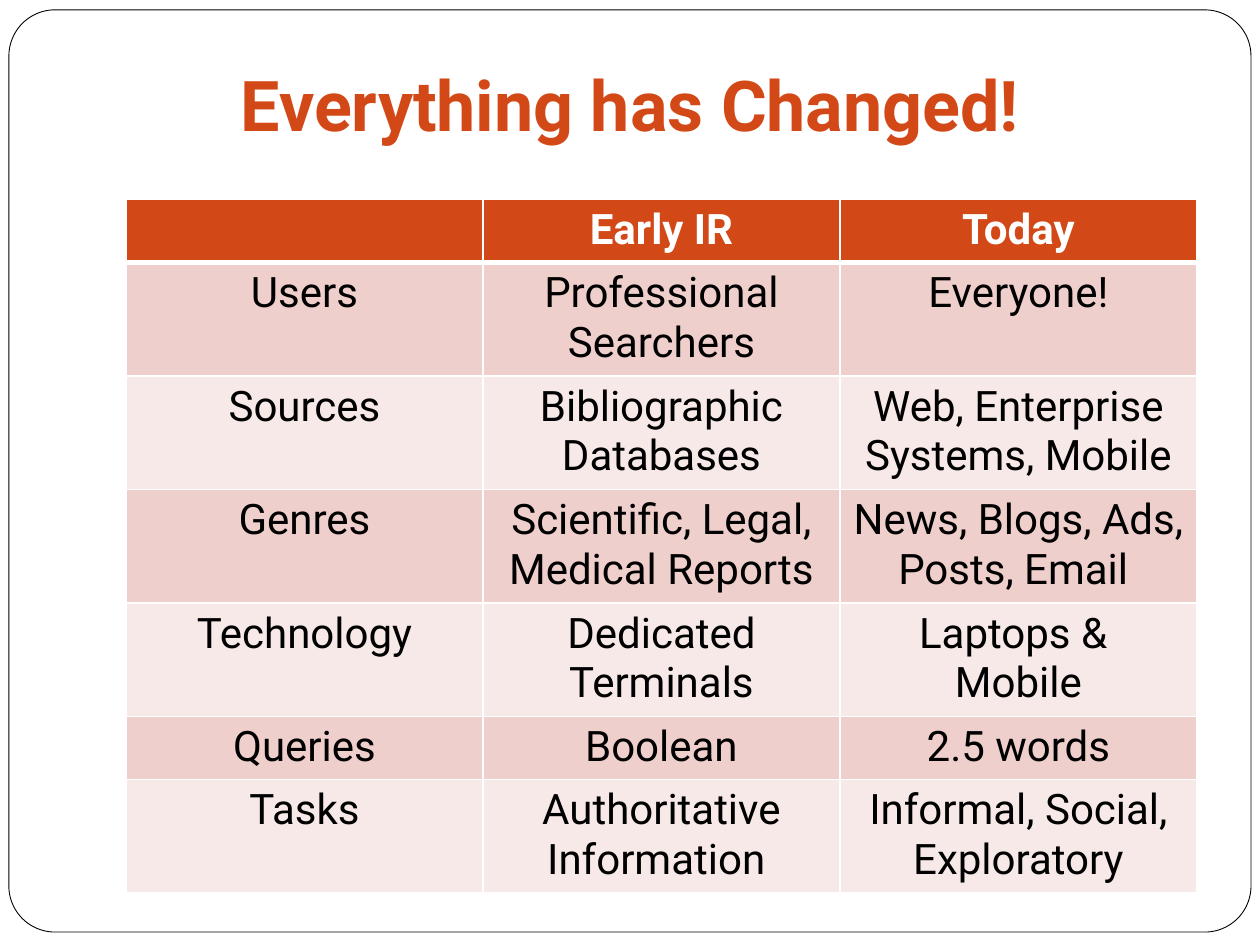
from lxml import etree
from pptx import Presentation
from pptx import util as u
from pptx.dml.color import RGBColor
from pptx.enum import shapes, text
from pptx.oxml.ns import qn

# Content: each cell is a tuple of paragraphs
TITLE = "Everything has Changed!"
HEADER = [(), ("Early IR",), ("Today",)]
ROWS = [
    [("Users",), ("Professional Searchers",), ("Everyone!",)],
    [("Sources",), ("Bibliographic", "Databases"), ("Web, Enterprise Systems, Mobile",)],
    [("Genres",), ("Scientific, Legal, Medical Reports",), ("News, Blogs, Ads, Posts, Email ",)],
    [("Technology",), ("Dedicated Terminals",), ("Laptops & ", "Mobile")],
    [("Queries",), ("Boolean",), ("2.5 words",)],
    [("Tasks",), ("Authoritative Information ",), ("Informal, Social, Exploratory",)],
]
ONE_LINE_ROWS = {"Queries"}

THEME = {
    "font": "Roboto",
    "title_size": 40,
    "cell_size": 24,
    "accent": "D34817",
    "paper": "FFFFFF",
    "ink": "000000",
    "bands": ("EFCFCC", "F7E9E8"),
}
ONE_LINE, TWO_LINES = u.Cm(1.25), u.Cm(2.25)


def color(name):
    return RGBColor.from_string(THEME.get(name, name))


def write(frame, lines, size, ink, bold):
    for index, line in enumerate(lines):
        paragraph = frame.paragraphs[0] if index == 0 else frame.add_paragraph()
        paragraph.alignment = text.PP_ALIGN.CENTER
        run = paragraph.add_run()
        run.text = line
        run.font.name = THEME["font"]
        run.font.size = u.Pt(size)
        run.font.bold = bold
        run.font.color.rgb = color(ink)


def add_borders(cell, widths):
    """Put white borders ahead of the cell's fill, as the schema requires."""
    properties = cell._tc.get_or_add_tcPr()
    for position, (side, width) in enumerate(widths.items()):
        line = etree.Element(qn("a:ln" + side), w=str(u.Pt(width)))
        fill = etree.SubElement(line, qn("a:solidFill"))
        etree.SubElement(fill, qn("a:srgbClr"), val=THEME["paper"])
        properties.insert(position, line)


presentation = Presentation()
presentation.slide_width, presentation.slide_height = u.Cm(25.4), u.Cm(19.05)
slide = presentation.slides.add_slide(presentation.slide_layouts[6])

# Rounded frame
frame = slide.shapes.add_shape(shapes.MSO_SHAPE.ROUNDED_RECTANGLE,
                               u.Cm(0.18), u.Cm(0.2), u.Cm(25.04), u.Cm(18.59))
frame.adjustments[0] = 0.05
frame.shadow.inherit = False
frame.fill.solid()
frame.fill.fore_color.rgb = color("paper")
frame.line.color.rgb = color("ink")
frame.line.width = u.Pt(0.5)

# Title
title = slide.shapes.add_textbox(u.Cm(1.9), 0, u.Cm(21.6), u.Cm(3.18)).text_frame
title.word_wrap = True
title.vertical_anchor = text.MSO_ANCHOR.BOTTOM
title.margin_bottom = u.Cm(0.25)
write(title, [TITLE], THEME["title_size"], "accent", True)

# Comparison table
heights = [ONE_LINE] + [ONE_LINE if row[0][0] in ONE_LINE_ROWS else TWO_LINES for row in ROWS]
table = slide.shapes.add_table(len(heights), len(HEADER), u.Cm(2.54), u.Cm(4.02),
                               u.Cm(21.59), sum(heights)).table
for r, (height, row) in enumerate(zip(heights, [HEADER] + ROWS)):
    table.rows[r].height = height
    is_header = r == 0
    borders = {"L": 1, "R": 1, "T": 3 if r == 1 else 1, "B": 3 if is_header else 1}
    for c, lines in enumerate(row):
        cell = table.cell(r, c)
        cell.fill.solid()
        cell.fill.fore_color.rgb = color("accent" if is_header else THEME["bands"][(r - 1) % 2])
        add_borders(cell, borders)
        write(cell.text_frame, lines, THEME["cell_size"], "paper" if is_header else "ink", is_header)

presentation.save("out.pptx")
